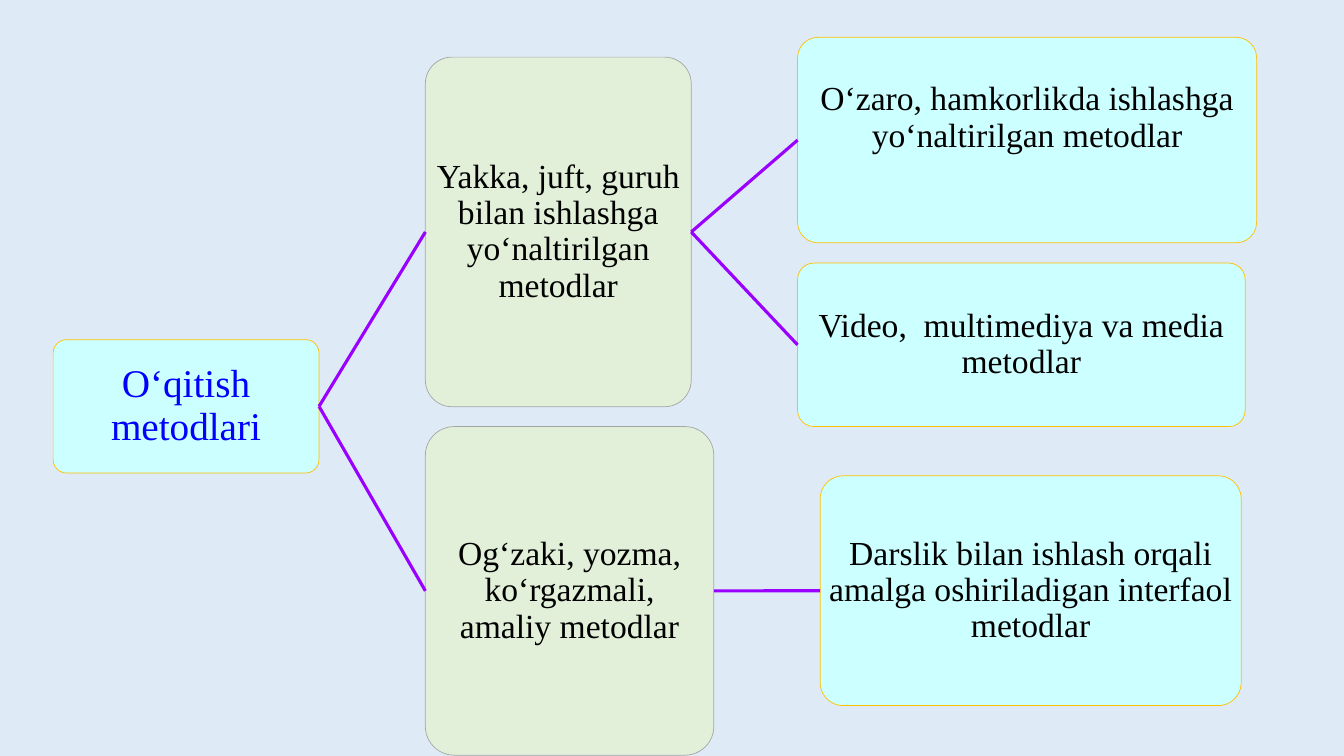
import pptx
import pptx.dml.color
import pptx.enum.shapes
import pptx.enum.text
import pptx.oxml.ns
import pptx.util
from lxml import etree

Cm = pptx.util.Cm
COLUMN_GAP = 2.68
RIGHT_SIDE, LEFT_SIDE = 3, 1

CYAN = {"fill": "CCFFFF", "line": "FFC000", "color": "000000", "size": 24}
GREEN = {**CYAN, "fill": "E2F0D9", "line": "A5A5A5"}
ROOT = {**CYAN, "color": "0000FF", "size": 28}

# Each node: text, style, top, width, height (cm), children; "lift" raises its text.
METHODS = {
    "text": "O‘qitish metodlari", "style": ROOT, "place": (8.56, 6.7, 3.36),
    "children": [
        {"text": "Yakka, juft, guruh bilan ishlashga yo‘naltirilgan metodlar",
         "style": GREEN, "place": (1.44, 6.7, 8.81),
         "children": [
             {"text": "O‘zaro, hamkorlikda ishlashga yo‘naltirilgan metodlar",
              "style": CYAN, "place": (0.94, 11.57, 5.18), "lift": 1.1},
             {"text": "Video,  multimediya va media metodlar",
              "style": CYAN, "place": (6.63, 11.28, 4.12)},
         ]},
        {"text": "Og‘zaki, yozma, ko‘rgazmali, amaliy metodlar",
         "style": GREEN, "place": (10.75, 7.27, 8.28),
         "children": [
             {"text": "Darslik bilan ishlash orqali amalga oshiriladigan interfaol metodlar",
              "style": CYAN, "place": (11.99, 10.61, 5.79)},
         ]},
    ],
}


def rgb(value):
    return pptx.dml.color.RGBColor.from_string(value)


def set_format(target, values):
    for name, value in values.items():
        setattr(target, name, value)


def set_fill(fill, color):
    fill.solid()
    fill.fore_color.rgb = rgb(color)


def add_box(page, left, node):
    top, width, height = node["place"]
    style = node["style"]
    box = page.shapes.add_shape(
        pptx.enum.shapes.MSO_SHAPE.ROUNDED_RECTANGLE,
        Cm(left), Cm(top), Cm(width), Cm(height))
    box.adjustments[0] = 0.1
    box.shadow.inherit = False
    set_fill(box.fill, style["fill"])
    set_fill(box.line.fill, style["line"])
    box.line.width = pptx.util.Pt(0.5)

    frame = box.text_frame
    inset = 0.05
    set_format(frame, {
        "word_wrap": True,
        "vertical_anchor": pptx.enum.text.MSO_ANCHOR.MIDDLE,
        "margin_left": Cm(inset), "margin_right": Cm(inset),
        "margin_top": Cm(inset), "margin_bottom": Cm(inset + node.get("lift", 0)),
    })
    para = frame.paragraphs[0]
    set_format(para, {"alignment": pptx.enum.text.PP_ALIGN.CENTER, "line_spacing": 0.9})
    span = para.add_run()
    span.text = node["text"]
    set_format(span.font, {"name": "Times New Roman", "size": pptx.util.Pt(style["size"])})
    span.font.color.rgb = rgb(style["color"])
    return box


def add_link(page, parent, child):
    link = page.shapes.add_connector(
        pptx.enum.shapes.MSO_CONNECTOR.STRAIGHT, 0, 0, 0, 0)
    link.begin_connect(parent, RIGHT_SIDE)
    link.end_connect(child, LEFT_SIDE)
    set_fill(link.line.fill, "9900FF")
    link.line.width = pptx.util.Pt(2.25)
    etree.SubElement(link.element.spPr, pptx.oxml.ns.qn("a:effectLst"))


def add_branch(page, left, node):
    """Place a node and, one column to its right, everything below it."""
    box = add_box(page, left, node)
    child_left = left + node["place"][1] + COLUMN_GAP
    for child in node.get("children", []):
        add_link(page, box, add_branch(page, child_left, child))
    return box


def main():
    deck = pptx.Presentation()
    set_format(deck, {"slide_width": Cm(33.87), "slide_height": Cm(19.05)})
    page = deck.slides.add_slide(deck.slide_layouts[6])
    set_fill(page.background.fill, "DEEBF7")
    add_branch(page, 1.34, METHODS)
    deck.save("out.pptx")


if __name__ == "__main__":
    main()
